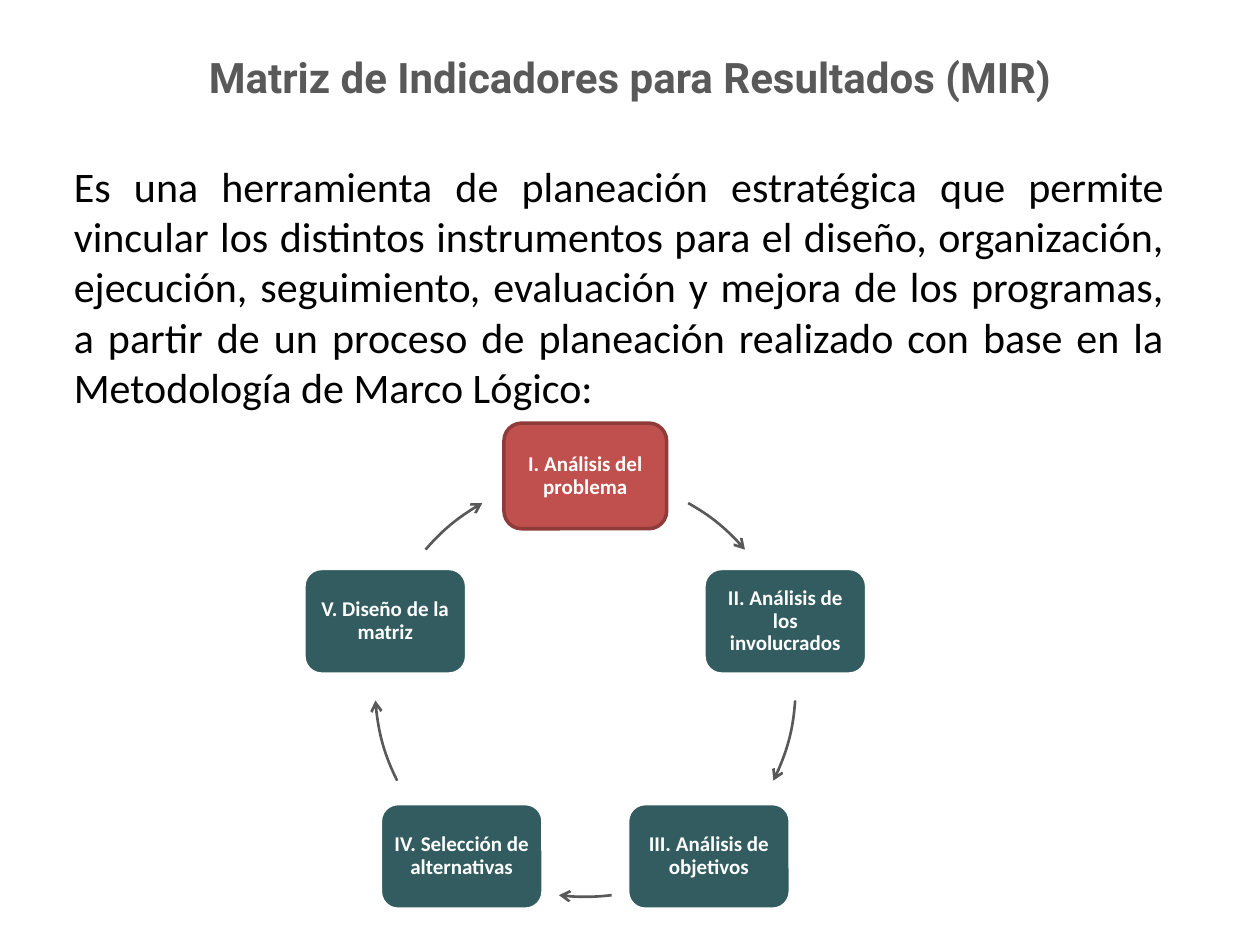
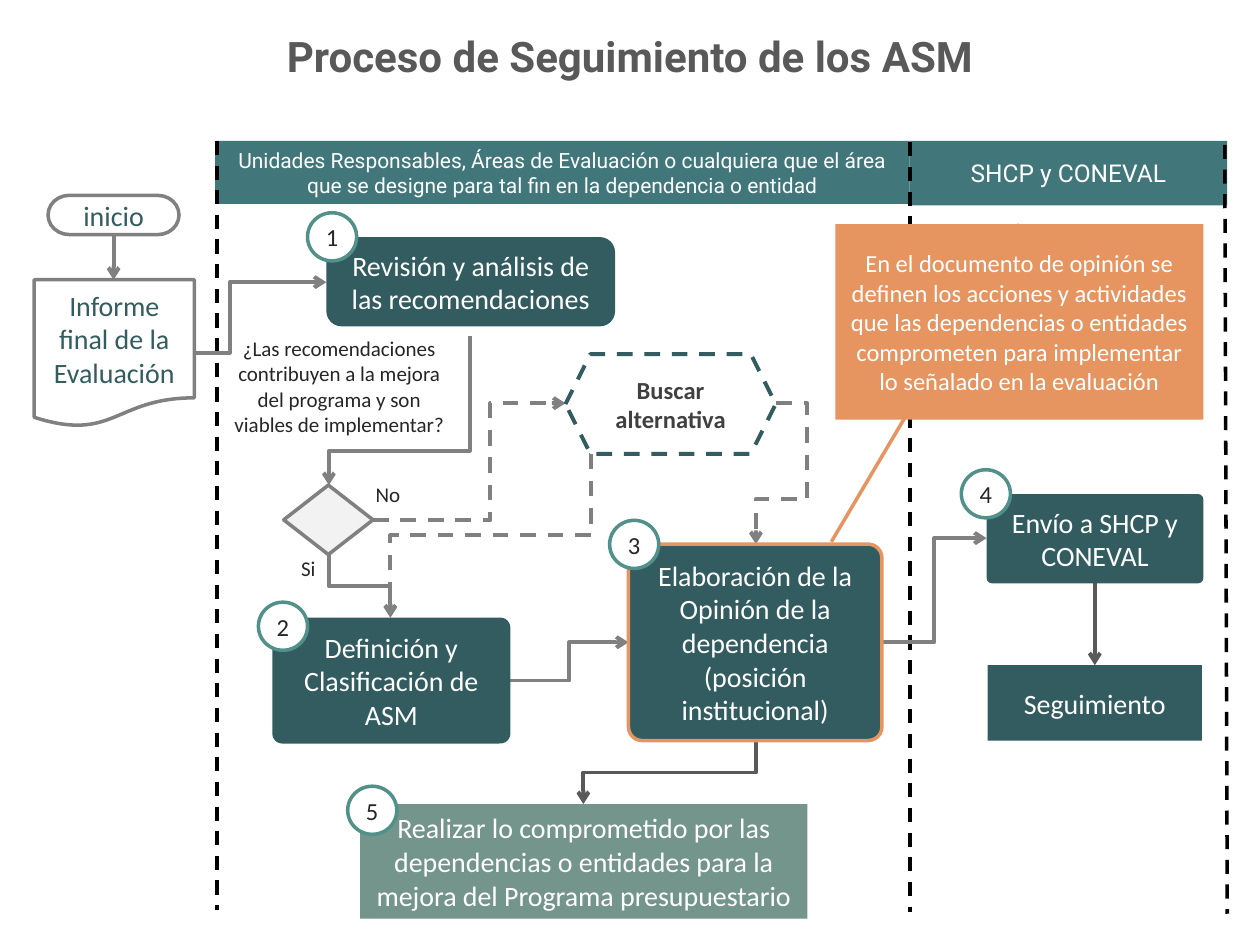
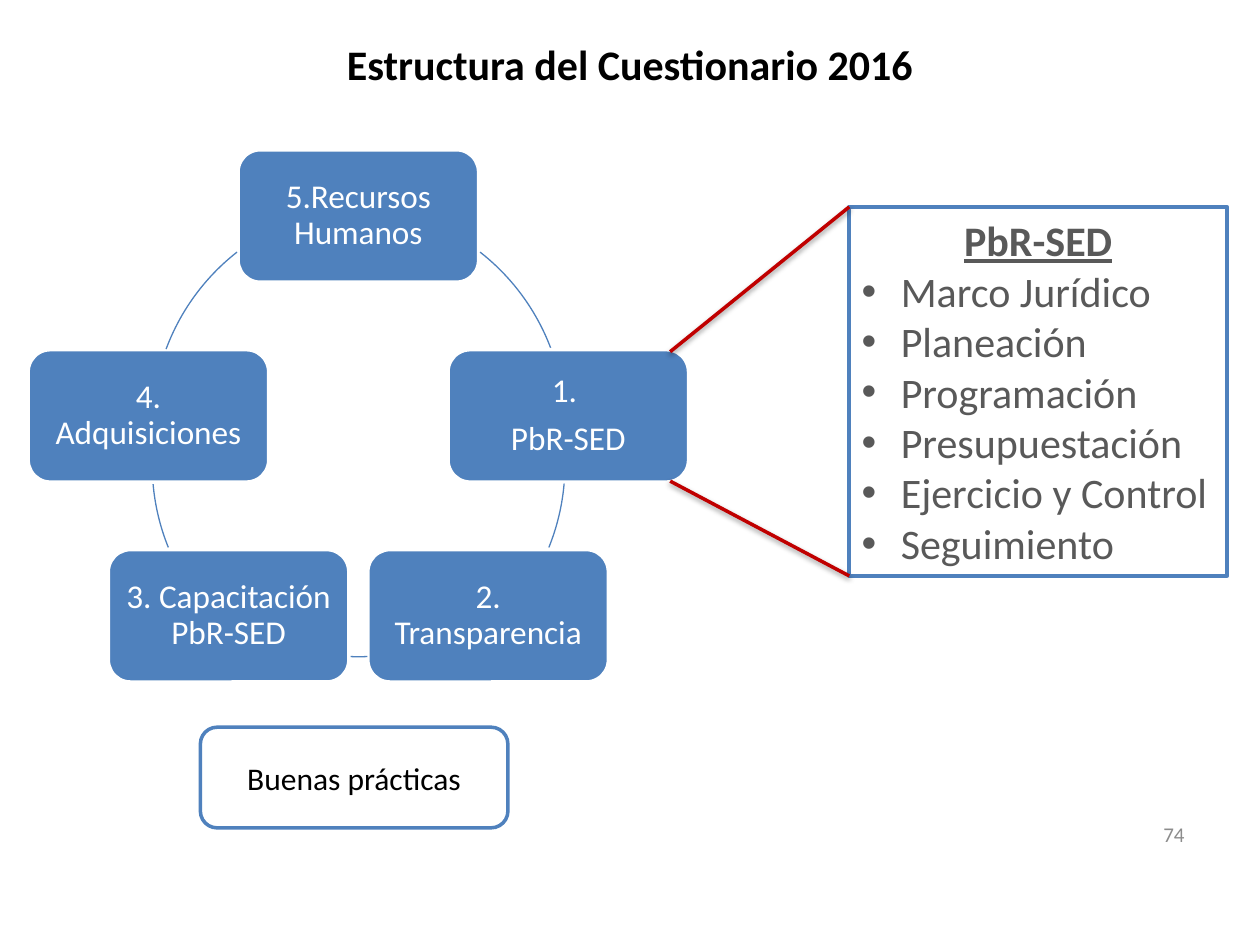
"""Build three slides on results indicators, ASM follow-up and the 2016 questionnaire."""
import math

import lxml.etree
import pptx
import pptx.dml.color
import pptx.enum.dml
import pptx.enum.shapes
import pptx.enum.text
import pptx.oxml.ns
import pptx.util

Cm = pptx.util.Cm
Pt = pptx.util.Pt
RGBColor = pptx.dml.color.RGBColor
SHAPE = pptx.enum.shapes.MSO_SHAPE
ALIGN = pptx.enum.text.PP_ALIGN
qn = pptx.oxml.ns.qn

WHITE = RGBColor(0xFF, 0xFF, 0xFF)
BLACK = RGBColor(0x00, 0x00, 0x00)
INK = RGBColor(0x26, 0x26, 0x26)
CHARCOAL = RGBColor(0x40, 0x40, 0x40)
DARK_GRAY = RGBColor(0x59, 0x59, 0x59)
GRAY = RGBColor(0x80, 0x80, 0x80)
PAGE_GRAY = RGBColor(0x8C, 0x8C, 0x8C)
PALE_GRAY = RGBColor(0xF2, 0xF2, 0xF2)
TEAL = RGBColor(0x32, 0x5C, 0x5F)
HEADER_TEAL = RGBColor(0x41, 0x77, 0x7B)
BADGE_TEAL = RGBColor(0x52, 0x90, 0x8A)
SAGE = RGBColor(0x74, 0x95, 0x8C)
ORANGE = RGBColor(0xE6, 0x94, 0x60)
RED = RGBColor(0xC0, 0x50, 0x4D)
DARK_RED = RGBColor(0x8E, 0x3B, 0x39)
CALLOUT_RED = RGBColor(0xC0, 0x00, 0x00)
BLUE = RGBColor(0x4F, 0x81, 0xBD)


def add_box(slide, kind, bounds, texts=(), size=16, color=WHITE, fill=None, line=None,
            width=2, bold=False, font="Calibri", align=ALIGN.CENTER, margin=None):
    """Add a preset shape, or a text box when kind is None, with one paragraph per text."""
    lengths = [Cm(value) for value in bounds]
    if kind is None:
        shape = slide.shapes.add_textbox(*lengths)
    else:
        shape = slide.shapes.add_shape(kind, *lengths)
        shape.shadow.inherit = False
    if fill is None:
        shape.fill.background()
    else:
        shape.fill.solid()
        shape.fill.fore_color.rgb = fill
    if line is None:
        shape.line.fill.background()
    else:
        shape.line.color.rgb = line
        shape.line.width = Pt(width)
    frame = shape.text_frame
    frame.word_wrap = True
    frame.vertical_anchor = pptx.enum.text.MSO_ANCHOR.MIDDLE
    if margin is not None:
        frame.margin_left = frame.margin_right = Cm(margin)
        frame.margin_top = frame.margin_bottom = Cm(margin)
    for index, text in enumerate(texts):
        paragraph = frame.add_paragraph() if index else frame.paragraphs[0]
        paragraph.alignment = align
        run = paragraph.add_run()
        run.text = text
        run.font.name = font
        run.font.size = Pt(size)
        run.font.bold = bold
        run.font.color.rgb = color
    return shape


def add_line(slide, start, end, color=GRAY, width=2.25, arrow=True, dashed=False,
             bends=(), turned=False):
    """Add a straight line, or an elbow when bends are given; a turned elbow leaves vertically."""
    (x1, y1), (x2, y2) = start, end
    if turned:
        sign = -1 if x2 > x1 else 1
        middle_x, middle_y = (x1 + x2) / 2, (y1 + y2) / 2
        half_length, half_width = sign * (y2 - y1) / 2, abs(x2 - x1) / 2
        x1, x2 = middle_x - half_length, middle_x + half_length
        y1, y2 = middle_y - half_width, middle_y + half_width
    connector_type = pptx.enum.shapes.MSO_CONNECTOR
    connector = slide.shapes.add_connector(
        connector_type.ELBOW if bends else connector_type.STRAIGHT,
        Cm(x1), Cm(y1), Cm(x2), Cm(y2))
    properties = connector.element.spPr
    if turned:
        properties.find(qn("a:xfrm")).set("rot", "5400000" if sign > 0 else "16200000")
    if bends:
        geometry = properties.find(qn("a:prstGeom"))
        geometry.set("prst", f"bentConnector{len(bends) + 2}")
        for number, bend in enumerate(bends, 1):
            lxml.etree.SubElement(geometry.find(qn("a:avLst")), qn("a:gd"),
                                  name=f"adj{number}", fmla=f"val {round(bend * 100000)}")
    connector.line.color.rgb = color
    connector.line.width = Pt(width)
    if dashed:
        connector.line.dash_style = pptx.enum.dml.MSO_LINE.DASH
    if arrow:
        lxml.etree.SubElement(properties.find(qn("a:ln")), qn("a:tailEnd"), type="arrow")
    lxml.etree.SubElement(properties, qn("a:effectLst"))
    return connector


presentation = pptx.Presentation()
presentation.slide_width = Cm(25.4)
presentation.slide_height = Cm(19.05)

titles = [
    ("Matriz de Indicadores para Resultados (MIR)", 0.91, 1.27, "Roboto", DARK_GRAY),
    ("Proceso de Seguimiento de los ASM", 0.23, 1.8, "Roboto", DARK_GRAY),
    ("Estructura del Cuestionario 2016", 0.23, 2.11, "Calibri", BLACK),
]
slides = []
for title, top, height, font, color in titles:
    slide = presentation.slides.add_slide(presentation.slide_layouts[6])
    add_box(slide, None, (1.27, top, 22.86, height), [title], 24, color, bold=True, font=font)
    slides.append(slide)
matrix_slide, process_slide, survey_slide = slides

add_box(matrix_slide, None, (1.24, 3, 22.48, 5.54), [
    "Es una herramienta de planeación estratégica que permite vincular los distintos "
    "instrumentos para el diseño, organización, ejecución, seguimiento, evaluación y mejora "
    "de los programas, a partir de un proceso de planeación realizado con base en la "
    "Metodología de Marco Lógico:"], 24, BLACK, align=ALIGN.JUSTIFY)

matrix_steps = ["I. Análisis del problema", "II. Análisis de los involucrados",
                "III. Análisis de objetivos", "IV. Selección de alternativas",
                "V. Diseño de la matriz"]
matrix_arcs = [(29.3, 49.4), (93.8, 116.6), (172.8, 187.2), (243.4, 266.2), (310.6, 330.7)]
center_x, center_y, radius = 11.8, 13.84, 4.24
for index, (step, angles) in enumerate(zip(matrix_steps, matrix_arcs)):
    turn = math.radians(72 * index)
    left = center_x + radius * math.sin(turn) - 1.64
    top = center_y - radius * math.cos(turn) - 1.07
    node = add_box(matrix_slide, SHAPE.ROUNDED_RECTANGLE, (left, top, 3.28, 2.13), [step], 12,
                   fill=TEAL if index else RED, line=WHITE if index else DARK_RED,
                   bold=True, margin=0.13)
    node.text_frame.paragraphs[0].line_spacing = 0.9
    arc = add_box(matrix_slide, SHAPE.ARC,
                  (center_x - radius, center_y - radius, 2 * radius, 2 * radius),
                  line=DARK_GRAY, width=1.5)
    for position, angle in enumerate(angles):
        arc.adjustments[position] = (angle - 90) % 360 * 0.6
    lxml.etree.SubElement(arc.element.spPr.find(qn("a:ln")), qn("a:tailEnd"), type="arrow")

headers = [
    ((4.34, 2.84, 14, 1.27), 12, "Unidades Responsables, Áreas de Evaluación o cualquiera que "
     "el área que se designe para tal fin en la dependencia o entidad"),
    ((18.34, 2.84, 6.4, 1.3), 14, "SHCP y CONEVAL"),
]
for bounds, size, text in headers:
    add_box(process_slide, SHAPE.RECTANGLE, bounds, [text], size, fill=HEADER_TEAL, font="Roboto")

lane_borders = [((4.37, 2.84), (4.37, 18.34)), ((18.34, 2.87), (18.34, 18.39)),
                ((24.69, 2.92), (24.74, 18.42))]
for start, end in lane_borders:
    add_line(process_slide, start, end, BLACK, 2, arrow=False, dashed=True)

add_line(process_slide, (20.55, 4.52), (16.76, 10.92), ORANGE, 2, arrow=False)
flows = [
    ((2.29, 4.72), (2.29, 5.64), {}),
    ((22.07, 11.76), (22.07, 13.41), {"color": DARK_GRAY}),
    ((15.24, 14.94), (11.76, 16.21), {"color": DARK_GRAY, "bends": [0.5], "turned": True}),
    ((3.91, 7.11), (6.58, 5.69), {"bends": [0.27]}),
    ((9.47, 6.78), (6.63, 9.78), {"bends": [0.77], "turned": True}),
    ((10.29, 13.72), (12.67, 12.95), {"bends": [0.5]}),
    ((17.78, 12.95), (19.89, 10.85), {"bends": [0.5]}),
    ((7.52, 10.49), (11.4, 8.13), {"bends": [0.61], "dashed": True}),
    ((11.91, 9.14), (7.87, 12.45), {"bends": [0.5], "turned": True, "dashed": True}),
    ((15.65, 8.13), (15.24, 10.97), {"bends": [-1.52, 0.68], "dashed": True}),
    ((6.63, 11.18), (7.87, 12.45), {"bends": [0.5], "turned": True}),
]
for start, end, style in flows:
    add_line(process_slide, start, end, **style)

add_box(process_slide, SHAPE.FLOWCHART_TERMINATOR, (0.97, 3.94, 2.64, 0.79), ["inicio"],
        color=TEAL, line=GRAY)
add_box(process_slide, SHAPE.FLOWCHART_DOCUMENT, (0.69, 5.64, 3.23, 2.97),
        ["Informe final de la Evaluación"], color=TEAL, line=GRAY)
add_box(process_slide, SHAPE.FLOWCHART_DECISION, (5.72, 9.78, 1.8, 1.4),
        fill=PALE_GRAY, line=GRAY)
alternative = add_box(process_slide, SHAPE.HEXAGON, (11.4, 7.14, 4.24, 2.01),
                      ["Buscar alternativa"], 14, CHARCOAL, WHITE, TEAL, 2.25, bold=True)
alternative.line.dash_style = pptx.enum.dml.MSO_LINE.DASH

labels = [
    ((4.34, 6.63, 5, 2.31), "¿Las recomendaciones contribuyen a la mejora del programa y son "
     "viables de implementar?"),
    ((5.77, 11.05, 0.89, 0.81), "Si"),
    ((7.26, 9.55, 1.12, 0.81), "No"),
]
for bounds, text in labels:
    add_box(process_slide, None, bounds, [text], 12, INK)

rounded_steps = [
    ((6.58, 4.78, 5.82, 1.8), 0.17, None, ["Revisión y análisis de las recomendaciones"]),
    ((5.49, 12.45, 4.8, 2.54), 0.08, None, ["Definición y Clasificación de ASM"]),
    ((12.67, 10.97, 5.11, 3.96), 0.07, ORANGE,
     ["Elaboración de la Opinión de la dependencia", "(posición institucional)"]),
    ((19.89, 9.96, 4.37, 1.8), 0.06, None, ["Envío a SHCP y CONEVAL"]),
]
for bounds, corner, outline, texts in rounded_steps:
    step = add_box(process_slide, SHAPE.ROUNDED_RECTANGLE, bounds, texts, fill=TEAL, line=outline)
    step.adjustments[0] = corner

square_steps = [
    ((7.26, 16.21, 9.02, 2.31), 16, SAGE, "Realizar lo comprometido por las dependencias o "
     "entidades para la mejora del Programa presupuestario"),
    ((19.91, 13.41, 4.32, 1.52), 16, TEAL, "Seguimiento"),
    ((16.84, 4.52, 7.42, 3.94), 14, ORANGE, "En el documento de opinión se definen los acciones "
     "y actividades que las dependencias o entidades comprometen para implementar lo señalado "
     "en la evaluación"),
]
for bounds, size, fill, text in square_steps:
    add_box(process_slide, SHAPE.RECTANGLE, bounds, [text], size, fill=fill)

badge_corners = [(6.2, 4.29), (5.21, 12.14), (12.29, 10.49), (19.38, 9.47), (7.01, 15.85)]
for number, (left, top) in enumerate(badge_corners, 1):
    add_box(process_slide, SHAPE.OVAL, (left, top, 0.99, 0.97), [str(number)], 14, INK,
            WHITE, BADGE_TEAL, margin=0)

survey_topics = [["5.Recursos Humanos"], ["1. ", "PbR-SED"], ["2. Transparencia"],
                 ["3. Capacitación PbR-SED"], ["4. Adquisiciones"]]
survey_rows = [0, 1, 2, 2, 1]
survey_arcs = [(-0.29, 8.59, 38, 69.6), (-0.29, 9.37, 94.9, 112), (0, 8.79, 177.7, 182.3),
               (0.29, 9.37, 248, 265.1), (0.29, 8.59, 290.4, 322)]
center_x, radius = 7.23, 4.45
for index, (topic, row, arc_data) in enumerate(zip(survey_topics, survey_rows, survey_arcs)):
    left = center_x + radius * math.sin(math.radians(72 * index)) - 2.43
    node = add_box(survey_slide, SHAPE.ROUNDED_RECTANGLE, (left, 3.02 + 4.03 * row, 4.85, 2.67),
                   topic, 19, fill=BLUE, line=WHITE, margin=0.2)
    for paragraph in node.text_frame.paragraphs:
        paragraph.line_spacing = 0.9
        paragraph.space_after = Pt(7)
    shift, arc_y, *angles = arc_data
    arc = add_box(survey_slide, SHAPE.ARC,
                  (center_x + shift - radius, arc_y - radius, 2 * radius, 2 * radius),
                  line=BLUE, width=0.75)
    for position, angle in enumerate(angles):
        arc.adjustments[position] = (angle - 90) % 360 * 0.6

section_box = add_box(
    survey_slide, SHAPE.RECTANGLE, (17.12, 4.17, 7.62, 7.44),
    ["PbR-SED", "Marco Jurídico", "Planeación", "Programación", "Presupuestación",
     "Ejercicio y Control", "Seguimiento"], 24, DARK_GRAY, WHITE, BLUE)
heading, *sections = section_box.text_frame.paragraphs
heading.runs[0].font.bold = True
heading.runs[0].font.underline = True
for paragraph in sections:
    paragraph.alignment = ALIGN.LEFT
    properties = paragraph._p.get_or_add_pPr()
    properties.set("marL", str(Cm(0.79)))
    properties.set("indent", str(-Cm(0.79)))
    lxml.etree.SubElement(properties, qn("a:buFont"), typeface="Arial")
    lxml.etree.SubElement(properties, qn("a:buChar"), char="•")

for start, end in [((13.51, 7.09), (17.12, 4.17)), ((13.51, 9.7), (17.12, 11.61))]:
    guide = add_line(survey_slide, start, end, CALLOUT_RED, 2, arrow=False)
    shadow = lxml.etree.SubElement(
        guide.element.spPr.find(qn("a:effectLst")), qn("a:outerShdw"),
        blurRad="40000", dist="20000", dir="5400000", rotWithShape="0")
    shadow_color = lxml.etree.SubElement(shadow, qn("a:srgbClr"), val=str(BLACK))
    lxml.etree.SubElement(shadow_color, qn("a:alpha"), val="38000")

add_box(survey_slide, SHAPE.ROUNDED_RECTANGLE, (4.04, 14.66, 6.2, 2.03), ["Buenas prácticas"],
        18, BLACK, WHITE, BLUE)
add_box(survey_slide, None, (18.21, 16.31, 5.92, 1.02), ["74"], 12, PAGE_GRAY, align=ALIGN.RIGHT)

presentation.save("out.pptx")
